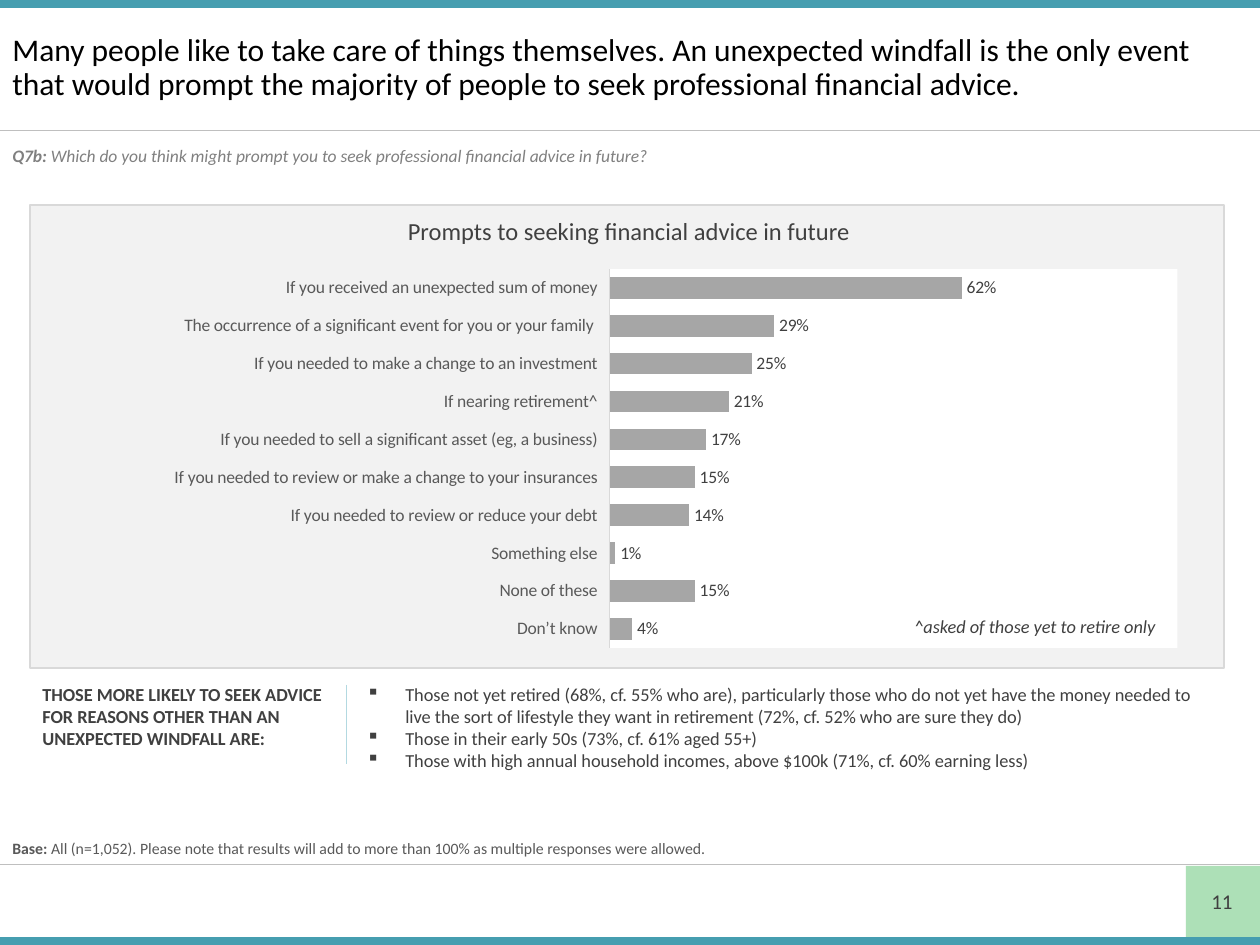
from dataclasses import dataclass
from typing import NamedTuple

from lxml import etree
from pptx import Presentation
from pptx.chart.data import CategoryChartData
from pptx.dml.color import RGBColor
from pptx.enum.chart import XL_CHART_TYPE, XL_LABEL_POSITION, XL_TICK_LABEL_POSITION, XL_TICK_MARK
from pptx.enum.shapes import MSO_CONNECTOR, MSO_SHAPE
from pptx.enum.text import MSO_ANCHOR, PP_ALIGN
from pptx.oxml import parse_xml
from pptx.oxml.ns import nsdecls, qn
from pptx.util import Pt

RECT = MSO_SHAPE.RECTANGLE
LINE = MSO_CONNECTOR.STRAIGHT
BARS = XL_CHART_TYPE.BAR_CLUSTERED
OUTER = XL_LABEL_POSITION.OUTSIDE_END
LOW = XL_TICK_LABEL_POSITION.LOW
NO_TICK = XL_TICK_MARK.NONE
LEFT, CENTER = PP_ALIGN.LEFT, PP_ALIGN.CENTER
TOP, MIDDLE, BOTTOM = MSO_ANCHOR.TOP, MSO_ANCHOR.MIDDLE, MSO_ANCHOR.BOTTOM

SCALE = 914400 / 126
WIDE, HIGH = 1260, 945


@dataclass(frozen=True)
class Theme:
    font: str = "Calibri"
    teal: str = "469EB0"
    pale: str = "B3D9E1"
    green: str = "6BC77C"
    rule: str = "BFBFBF"
    panel: str = "F2F2F2"
    edge: str = "D9D9D9"
    bar: str = "A6A6A6"
    white: str = "FFFFFF"
    black: str = "000000"
    dark: str = "404040"
    mid: str = "595959"
    soft: str = "808080"
    title: float = 18
    head: float = 14
    page: float = 12
    body: float = 10.5
    small: float = 10
    base: float = 9


THEME = Theme()


class Box(NamedTuple):
    x: int
    y: int
    w: int
    h: int


class Block(NamedTuple):
    box: Box
    fill: str
    edge: str | None = None
    alpha: int = 100


class Rule(NamedTuple):
    start: tuple[int, int]
    end: tuple[int, int]
    color: str


class Run(NamedTuple):
    text: str
    bold: bool = False


BLOCKS = [
    Block(Box(0, 0, WIDE, 8), THEME.teal),
    Block(Box(0, HIGH - 8, WIDE, 8), THEME.teal),
    Block(Box(1186, 866, 74, 71), THEME.green, alpha=55),
    Block(Box(30, 205, 1194, 463), THEME.panel, THEME.edge),
]
RULES = [
    Rule((0, 130), (WIDE, 130), THEME.rule),
    Rule((0, 864), (WIDE, 864), THEME.rule),
    Rule((346, 685), (346, 764), THEME.pale),
]
PROMPTS = {
    "If you received an unexpected sum of money": 0.62,
    "The occurrence of a significant event for you or your family ": 0.29,
    "If you needed to make a change to an investment": 0.25,
    "If nearing retirement^": 0.21,
    "If you needed to sell a significant asset (eg, a business)": 0.17,
    "If you needed to review or make a change to your insurances": 0.15,
    "If you needed to review or reduce your debt": 0.14,
    "Something else": 0.01,
    "None of these": 0.15,
    "Don’t know": 0.04,
}
GROUPS = [
    "Those not yet retired (68%, cf. 55% who are), particularly those who do not yet have the money "
    "needed to live the sort of lifestyle they want in retirement (72%, cf. 52% who are sure they do)",
    "Those in their early 50s (73%, cf. 61% aged 55+)",
    "Those with high annual household incomes, above $100k (71%, cf. 60% earning less)",
]


def px(n: int) -> int:
    return round(n * SCALE)


def place(box: Box) -> list[int]:
    return [px(n) for n in box]


def rgb(color: str) -> RGBColor:
    return RGBColor.from_string(color)


def style(font, size: float, color: str) -> None:
    font.name, font.size = THEME.font, Pt(size)
    font.color.rgb = rgb(color)


def draw_block(slide, block: Block) -> None:
    shape = slide.shapes.add_shape(RECT, *place(block.box))
    shape.shadow.inherit = False
    shape.fill.solid()
    shape.fill.fore_color.rgb = rgb(block.fill)
    if block.alpha < 100:
        tint = shape.fill._xPr.find(".//" + qn("a:srgbClr"))
        etree.SubElement(tint, qn("a:alpha"), val=str(block.alpha * 1000))
    if block.edge:
        shape.line.color.rgb = rgb(block.edge)
        shape.line.width = Pt(0.75)
    else:
        shape.line.fill.background()


def draw_rule(slide, rule: Rule) -> None:
    ends = [px(n) for n in rule.start + rule.end]
    line = slide.shapes.add_connector(LINE, *ends)
    line.line.color.rgb = rgb(rule.color)
    line.line.width = Pt(0.5)
    etree.SubElement(line._element.spPr, qn("a:effectLst"))


def write(slide, box: Box, *paras: list[Run], size: float = THEME.body, color: str = THEME.dark,
          italic: bool = False, align=LEFT, anchor=TOP, wrap: bool = True,
          bullet: str = "", space: float | None = None) -> None:
    frame = slide.shapes.add_textbox(*place(box)).text_frame
    frame.word_wrap, frame.vertical_anchor = wrap, anchor
    for i, runs in enumerate(paras):
        para = frame.add_paragraph() if i else frame.paragraphs[0]
        para.alignment = align
        if space:
            para.line_spacing = space
        if bullet:
            props = para._p.get_or_add_pPr()
            props.set("marL", str(px(39)))
            props.set("indent", str(-px(39)))
            etree.SubElement(props, qn("a:buChar"), char=bullet)
        for part in runs:
            run = para.add_run()
            run.text = part.text
            style(run.font, size, color)
            run.font.bold, run.font.italic = part.bold, italic


def draw_chart(slide, box: Box, prompts: dict[str, float]) -> None:
    data = CategoryChartData(number_format="0%")
    data.categories = list(prompts)
    data.add_series("Series 1", list(prompts.values()))
    chart = slide.shapes.add_chart(BARS, *place(box), data).chart
    chart.has_title = chart.has_legend = False
    style(chart.font, THEME.small, THEME.black)

    # Axes
    cats, vals = chart.category_axis, chart.value_axis
    cats.reverse_order = True
    cats.major_tick_mark = NO_TICK
    cats.tick_label_position = LOW
    cats.format.line.color.rgb = rgb(THEME.edge)
    cats.format.line.width = Pt(0.75)
    style(cats.tick_labels.font, THEME.small, THEME.mid)
    vals.minimum_scale, vals.maximum_scale, vals.major_unit = 0, 1, 0.2
    vals.has_major_gridlines = vals.visible = False

    # Bars and their labels
    plot = chart.plots[0]
    plot.gap_width, plot.vary_by_categories = 75, False
    fill = plot.series[0].format.fill
    fill.solid()
    fill.fore_color.rgb = rgb(THEME.bar)
    plot.has_data_labels = True
    labels = plot.data_labels
    labels.show_value, labels.position = True, OUTER
    labels.number_format, labels.number_format_is_linked = "0%", False
    style(labels.font, THEME.small, THEME.dark)

    # Plot area place and fill
    area = chart._chartSpace.find(".//" + qn("c:plotArea"))
    for old in area.findall(qn("c:layout")):
        area.remove(old)
    sides = "".join(f'<c:{k} val="{v}"/>' for k, v in dict(
        layoutTarget="inner", xMode="edge", yMode="edge", x=0.49, y=0.05, w=0.48, h=0.9).items())
    area.insert(0, parse_xml(
        f'<c:layout {nsdecls("c")}><c:manualLayout>{sides}</c:manualLayout></c:layout>'))
    area.append(parse_xml(
        f'<c:spPr {nsdecls("c", "a")}><a:solidFill><a:srgbClr val="{THEME.white}"/>'
        '</a:solidFill></c:spPr>'))


def main() -> None:
    deck = Presentation()
    deck.slide_width, deck.slide_height = px(WIDE), px(HIGH)
    slide = deck.slides.add_slide(deck.slide_layouts[6])

    # Bands, panel, chart and rules
    for block in BLOCKS:
        draw_block(slide, block)
    draw_chart(slide, Box(30, 248, 1183, 421), PROMPTS)
    for rule in RULES:
        draw_rule(slide, rule)

    # Title and question
    write(slide, Box(0, 15, 1247, 107), [Run(
        "Many people like to take care of things themselves. An unexpected windfall is the only event "
        "that would prompt the majority of people to seek professional financial advice.")],
        size=THEME.title, color=THEME.black, anchor=MIDDLE, space=0.9)
    write(slide, Box(0, 139, WIDE, 34), [Run("Q7b: ", True), Run(
        "Which do you think might prompt you to seek professional financial advice in future?")],
        size=THEME.small, color=THEME.soft, italic=True)

    # Chart heading and note
    write(slide, Box(33, 210, 1192, 43), [Run("Prompts to seeking financial advice in future")],
          size=THEME.head, align=CENTER)
    write(slide, Box(902, 609, 271, 35), [Run("^asked of those yet to retire only")],
          italic=True, wrap=False)

    # Findings
    write(slide, Box(30, 677, 314, 79), [Run(
        "THOSE MORE LIKELY TO SEEK ADVICE FOR REASONS OTHER THAN AN UNEXPECTED WINDFALL ARE:", True)])
    write(slide, Box(354, 677, 871, 102), *[[Run(text)] for text in GROUPS], bullet="▪")

    # Base and page number
    write(slide, Box(0, 833, WIDE, 31), [Run("Base: ", True), Run(
        "All (n=1,052). Please note that results will add to more than 100% "
        "as multiple responses were allowed.")],
        size=THEME.base, color=THEME.mid, anchor=BOTTOM)
    write(slide, Box(1197, 882, 50, 38), [Run("11")], size=THEME.page, align=CENTER, wrap=False)

    deck.save("out.pptx")


if __name__ == "__main__":
    main()
